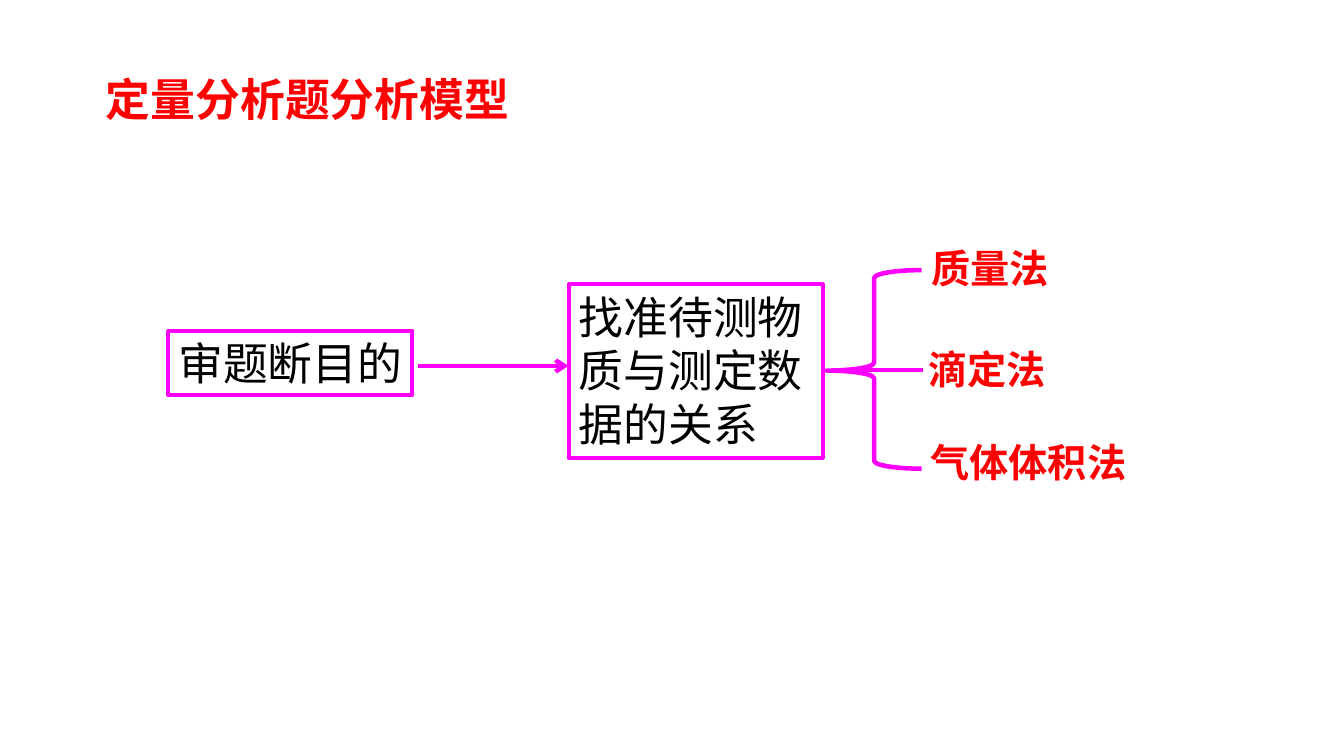
from dataclasses import dataclass

from lxml.etree import SubElement
from pptx import Presentation
from pptx.dml.color import RGBColor
from pptx.enum.shapes import MSO_CONNECTOR, MSO_SHAPE
from pptx.enum.text import MSO_ANCHOR, MSO_AUTO_SIZE, PP_ALIGN
from pptx.oxml.ns import qn
from pptx.util import Inches, Pt


@dataclass(frozen=True)
class Theme:
    font: str = "Noto Sans CJK SC"
    accent: RGBColor = RGBColor(0xFF, 0x00, 0x00)
    ink: RGBColor = RGBColor(0x00, 0x00, 0x00)
    outline: RGBColor = RGBColor(0xFF, 0x00, 0xFF)
    large: Pt = Pt(32)
    small: Pt = Pt(28)
    box_line: Pt = Pt(2.75)
    arrow_line: Pt = Pt(3)
    brace_line: Pt = Pt(3.25)


THEME = Theme()


def write(shape, text, size, color, bold=False, wrap=True, anchor=MSO_ANCHOR.TOP):
    """Put one left-aligned paragraph into a shape and return it."""
    frame = shape.text_frame
    frame.text = text
    frame.auto_size = MSO_AUTO_SIZE.NONE
    frame.word_wrap = wrap
    frame.vertical_anchor = anchor
    paragraph = frame.paragraphs[0]
    paragraph.alignment = PP_ALIGN.LEFT
    font = paragraph.font
    font.name, font.size, font.bold = THEME.font, size, bold
    font.color.rgb = color
    # East Asian text takes its typeface from a:ea
    properties = paragraph._p.get_or_add_pPr().get_or_add_defRPr()
    SubElement(properties, qn("a:ea"), typeface=THEME.font)
    return paragraph


def add_title(slide, text, left, top, width, height):
    title = slide.shapes.title
    title.left, title.top = Inches(left), Inches(top)
    title.width, title.height = Inches(width), Inches(height)
    paragraph = write(title, text, THEME.large, THEME.accent, bold=True,
                      anchor=MSO_ANCHOR.MIDDLE)
    paragraph.line_spacing = 1.5


def add_outline(slide, preset, left, top, width, height, weight):
    shape = slide.shapes.add_shape(preset, Inches(left), Inches(top),
                                   Inches(width), Inches(height))
    shape.shadow.inherit = False
    shape.fill.background()
    shape.line.color.rgb = THEME.outline
    shape.line.width = weight
    return shape


def add_step(slide, text, left, top, width, height, wrap=True):
    step = add_outline(slide, MSO_SHAPE.RECTANGLE, left, top, width, height,
                       THEME.box_line)
    write(step, text, THEME.large, THEME.ink, wrap=wrap)


def add_level_line(slide, start, end, y, weight, arrow=False):
    line = slide.shapes.add_connector(MSO_CONNECTOR.STRAIGHT, Inches(start),
                                      Inches(y), Inches(end), Inches(y))
    line.line.color.rgb = THEME.outline
    line.line.width = weight
    if arrow:
        SubElement(line.line._get_or_add_ln(), qn("a:tailEnd"), type="arrow")
    SubElement(line._element.spPr, qn("a:effectLst"))


def add_method(slide, text, left, top, width):
    method = slide.shapes.add_textbox(Inches(left), Inches(top),
                                      Inches(width), Inches(0.57))
    write(method, text, THEME.small, THEME.accent, bold=True, wrap=False)


def main():
    deck = Presentation()
    deck.slide_width, deck.slide_height = Inches(13.33), Inches(7.5)
    slide = deck.slides.add_slide(deck.slide_layouts[5])

    add_title(slide, "定量分析题分析模型", 0.95, 0.39, 6.95, 0.91)

    # Two steps of the analysis
    add_step(slide, "审题断目的", 1.67, 3.28, 2.42, 0.64, wrap=False)
    add_level_line(slide, 4.15, 5.64, 3.63, THEME.arrow_line, arrow=True)
    add_step(slide, "找准待测物质与测定数据的关系", 5.64, 2.82, 2.52, 1.72)

    # Brace that branches into the methods
    brace = add_outline(slide, MSO_SHAPE.LEFT_BRACE, 8.2, 2.68, 0.94, 1.97,
                        THEME.brace_line)
    brace.adjustments[0], brace.adjustments[1] = 0.083, 0.506
    add_level_line(slide, 8.44, 9.15, 3.67, THEME.brace_line)

    # Methods
    for text, left, top, width in (
        ("质量法", 9.14, 2.37, 1.37),
        ("滴定法", 9.11, 3.38, 1.37),
        ("气体体积法", 9.13, 4.3, 2.15),
    ):
        add_method(slide, text, left, top, width)

    deck.save("out.pptx")


if __name__ == "__main__":
    main()
